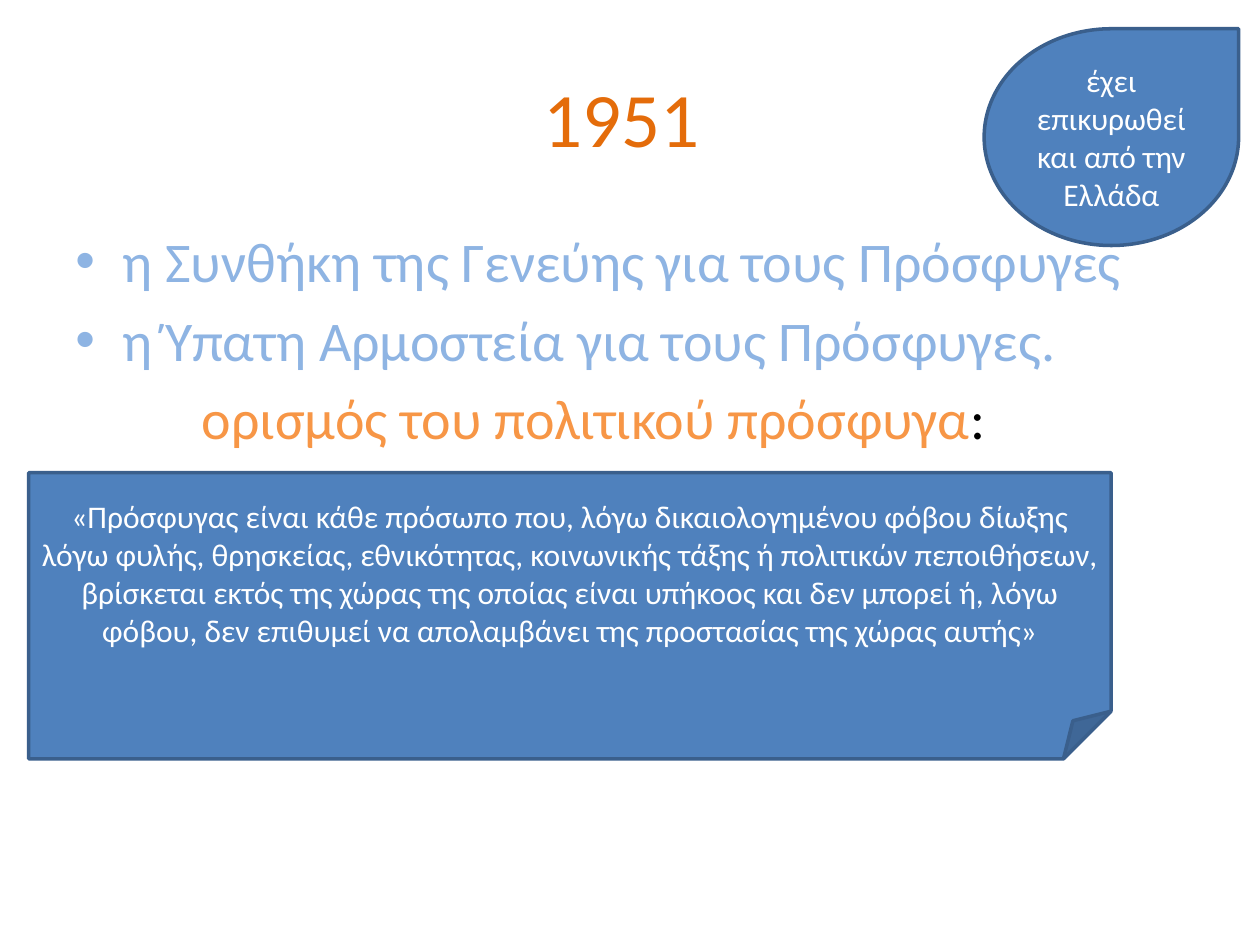
from dataclasses import dataclass
from typing import NamedTuple

from lxml.etree import SubElement
from pptx import Presentation
from pptx.dml.color import RGBColor
from pptx.enum.shapes import MSO_SHAPE as Shape
from pptx.enum.text import MSO_ANCHOR as Anchor, PP_ALIGN as Align
from pptx.oxml.ns import qn
from pptx.util import Cm, Pt


@dataclass(frozen=True)
class Theme:
    font: str = "Calibri"
    title_size: float = 44
    body_size: float = 32
    note_size: float = 18
    line_width: float = 2
    title: str = "E46C0A"
    body: str = "8EB4E3"
    accent: str = "F79646"
    dark: str = "000000"
    light: str = "FFFFFF"
    fill: str = "4F81BD"
    line: str = "3A5F8C"


THEME = Theme()


class Box(NamedTuple):
    """A region in centimetres."""
    left: float
    top: float
    width: float
    height: float

    def lengths(self):
        return [Cm(value) for value in self]


def write(para, text, *, size, color, align=None):
    """Add a formatted span of text to a paragraph."""
    span = para.add_run()
    span.text = text
    span.font.name = THEME.font
    span.font.size = Pt(size)
    span.font.color.rgb = RGBColor.from_string(color)
    if align is not None:
        para.alignment = align


def indent(para, left, hanging=0, bullet=None):
    """Indent a paragraph, with an optional hanging bullet."""
    props = para._p.get_or_add_pPr()
    props.set("marL", str(Cm(left)))
    props.set("indent", str(-Cm(hanging)))
    if bullet:
        SubElement(props, qn("a:buFont")).set("typeface", "Arial")
        SubElement(props, qn("a:buChar")).set("char", bullet)


def add_text_frame(page, box, anchor):
    frame = page.shapes.add_textbox(*box.lengths()).text_frame
    frame.word_wrap = True
    frame.vertical_anchor = anchor
    return frame


def add_title(page, box, text):
    frame = add_text_frame(page, box, Anchor.MIDDLE)
    write(frame.paragraphs[0], text, size=THEME.title_size,
          color=THEME.title, align=Align.CENTER)


def add_body(page, box, bullets, heading):
    """Bulleted lines followed by an indented heading."""
    frame = add_text_frame(page, box, Anchor.TOP)
    paras = [frame.paragraphs[0]] + [frame.add_paragraph() for _ in bullets]
    for para in paras:
        para.space_before = Pt(0.2 * THEME.body_size)

    for para, text in zip(paras, bullets):
        indent(para, 0.95, hanging=0.95, bullet="•")
        write(para, text, size=THEME.body_size, color=THEME.body)

    indent(paras[-1], 2.55)
    write(paras[-1], heading, size=THEME.body_size, color=THEME.accent)
    write(paras[-1], ":", size=THEME.body_size, color=THEME.dark)


def add_note(page, box, kind, text, bottom_margin=0.13):
    """A filled shape with centred text."""
    shape = page.shapes.add_shape(kind, *box.lengths())
    shape.shadow.inherit = False
    shape.fill.solid()
    shape.fill.fore_color.rgb = RGBColor.from_string(THEME.fill)
    shape.line.color.rgb = RGBColor.from_string(THEME.line)
    shape.line.width = Pt(THEME.line_width)
    frame = shape.text_frame
    frame.word_wrap = True
    frame.vertical_anchor = Anchor.MIDDLE
    frame.margin_bottom = Cm(bottom_margin)
    write(frame.paragraphs[0], text, size=THEME.note_size,
          color=THEME.light, align=Align.CENTER)


def main():
    deck = Presentation()
    deck.slide_width, deck.slide_height = Cm(25.4), Cm(19.05)
    page = deck.slides.add_slide(deck.slide_layouts[6])

    # Title and main points
    add_title(page, Box(1.27, 0.76, 22.86, 3.18), "1951 ")
    add_body(
        page, Box(1.27, 4.45, 22.86, 12.57),
        ["η Συνθήκη της Γενεύης για τους Πρόσφυγες",
         "η Ύπατη Αρμοστεία για τους Πρόσφυγες."],
        "ορισμός του πολιτικού πρόσφυγα")

    # Ratification remark
    add_note(page, Box(19.84, 0.58, 5.13, 4.37), Shape.TEAR,
             "έχει επικυρωθεί και από την Ελλάδα")

    # Definition, raised above the folded corner
    add_note(
        page, Box(0.58, 9.53, 21.82, 5.77), Shape.FOLDED_CORNER,
        "«Πρόσφυγας είναι κάθε πρόσωπο που, λόγω δικαιολογημένου φόβου "
        "δίωξης λόγω φυλής, θρησκείας, εθνικότητας, κοινωνικής τάξης ή "
        "πολιτικών πεποιθήσεων, βρίσκεται εκτός της χώρας της οποίας είναι "
        "υπήκοος και δεν μπορεί ή, λόγω φόβου, δεν επιθυμεί να απολαμβάνει "
        "της προστασίας της χώρας αυτής»",
        bottom_margin=0.9)

    deck.save("out.pptx")


if __name__ == "__main__":
    main()
